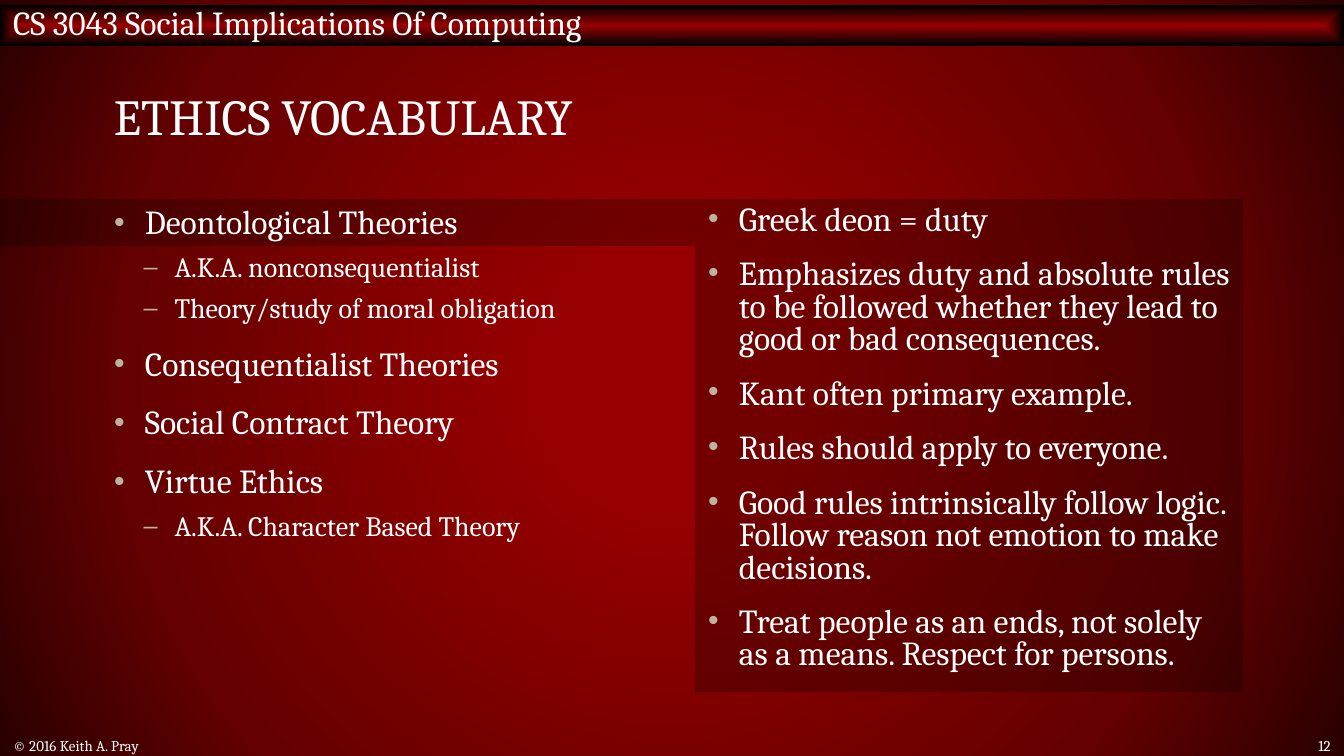
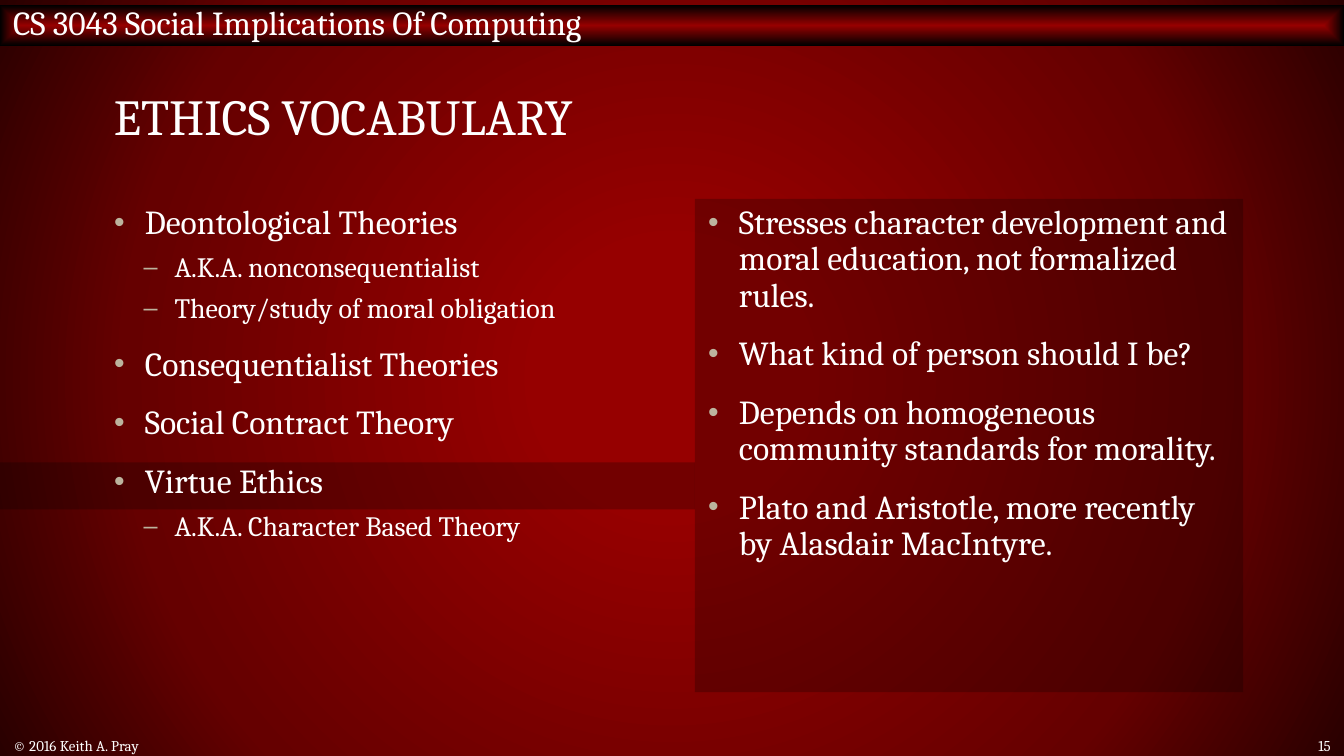
from lxml.etree import SubElement
from pptx import Presentation
from pptx.dml.color import RGBColor
from pptx.enum.shapes import MSO_SHAPE as Shape
from pptx.enum.text import MSO_ANCHOR as Anchor, PP_ALIGN as Align
from pptx.oxml.ns import qn
from pptx.util import Inches, Pt

# Content
COURSE = "CS 3043 Social Implications Of Computing"
TITLE = "ETHICS VOCABULARY"
COPYRIGHT = "© 2016 Keith A. Pray"
TOPICS = [  # (level, text)
    (0, "Deontological Theories"),
    (1, "A.K.A. nonconsequentialist"),
    (1, "Theory/study of moral obligation"),
    (0, "Consequentialist Theories"),
    (0, "Social Contract Theory"),
    (0, "Virtue Ethics"),
    (1, "A.K.A. Character Based Theory"),
]
PAGES = [
    {"number": "12", "band_top": 1.48, "spacing": 0.8, "details": [
        "Greek deon = duty",
        "Emphasizes duty and absolute rules to be followed whether they lead "
        "to good or bad consequences.",
        "Kant often primary example.",
        "Rules should apply to everyone.",
        "Good rules intrinsically follow logic. Follow reason not emotion to "
        "make decisions.",
        "Treat people as an ends, not solely as a means. Respect for persons.",
    ]},
    {"number": "15", "band_top": 3.44, "spacing": 0.9, "details": [
        "Stresses character development and moral education, not formalized rules.",
        "What kind of person should I be?",
        "Depends on homogeneous community standards for morality.",
        "Plato and Aristotle, more recently by Alasdair MacIntyre.",
    ]},
]

# Style
FONT = "Cambria"
WHITE = RGBColor(0xFF, 0xFF, 0xFF)
BLACK = RGBColor(0x00, 0x00, 0x00)
RED = RGBColor(0x96, 0x00, 0x00)
DEEP_RED = RGBColor(0x65, 0x00, 0x00)
DARK_RED = RGBColor(0x29, 0x00, 0x00)
BULLET = RGBColor(0xBC, 0xB4, 0x9E)
PAGE_STOPS = [(17, RED), (71, DEEP_RED), (100, DARK_RED)]
BAR_STOPS = [(0, RED), (100, BLACK)]
SHADE_OPACITY = 24
LEVELS = [  # size, space before, bullet, left indent
    (18, 12, "•", 0.23),
    (15, 6, "–", 0.45),
]
HANGING = 0.23

# Layout, on a 16:9 page
WIDTH = 10
HEIGHT = WIDTH * 9 / 16
MARGIN = 0.75
COLUMN_TOP, COLUMN_WIDTH, COLUMN_HEIGHT = 1.48, 4.08, 3.67
PANEL_LEFT = WIDTH - MARGIN - COLUMN_WIDTH
BAND_HEIGHT = 0.35
FOOTER_HEIGHT = 0.16
FOOTER_TOP = HEIGHT - FOOTER_HEIGHT
NUMBER_WIDTH = 0.68


def inches(*lengths):
    return [Inches(length) for length in lengths]


def set_gradient(fill, owner, stops, shading):
    """Fill from the centre outwards with (percent, colour) stops."""
    fill.gradient()
    gradient = owner.find(".//" + qn("a:gradFill"))
    gradient.clear()
    stop_list = SubElement(gradient, qn("a:gsLst"))
    for percent, color in stops:
        stop = SubElement(stop_list, qn("a:gs"), pos=str(percent * 1000))
        SubElement(stop, qn("a:srgbClr"), val=str(color))
    outline = SubElement(gradient, qn("a:path"), attrib={"path": shading})
    SubElement(outline, qn("a:fillToRect"),
               attrib={side: "50000" for side in "ltrb"})


def add_rectangle(page, place):
    box = page.shapes.add_shape(Shape.RECTANGLE, *inches(*place))
    box.shadow.inherit = False
    box.line.fill.background()
    return box


def add_shade(page, place):
    box = add_rectangle(page, place)
    box.fill.solid()
    box.fill.fore_color.rgb = BLACK
    color = box.element.spPr.find(".//" + qn("a:srgbClr"))
    SubElement(color, qn("a:alpha"), val=str(SHADE_OPACITY * 1000))


def write(para, text, size=18, align=Align.LEFT, spacing=None):
    para.alignment = align
    if spacing:
        para.line_spacing = spacing
    span = para.add_run()
    span.text = text
    span.font.name = FONT
    span.font.size = Pt(size)
    span.font.color.rgb = WHITE


def add_text(page, place, text, anchor=Anchor.MIDDLE, **style):
    box = page.shapes.add_textbox(*inches(*place))
    box.text_frame.word_wrap = True
    box.text_frame.vertical_anchor = anchor
    write(box.text_frame.paragraphs[0], text, **style)


def add_bullet(para, symbol, left):
    properties = para._p.get_or_add_pPr()
    properties.set("marL", str(Inches(left)))
    properties.set("indent", str(-Inches(HANGING)))
    tint = SubElement(properties, qn("a:buClr"))
    SubElement(tint, qn("a:srgbClr"), val=str(BULLET))
    SubElement(properties, qn("a:buSzPct"), val="90000")
    SubElement(properties, qn("a:buFont"), typeface="Arial")
    SubElement(properties, qn("a:buChar"), char=symbol)


def add_list(page, left, items, spacing=0.9):
    place = (left, COLUMN_TOP, COLUMN_WIDTH, COLUMN_HEIGHT)
    frame = page.shapes.add_textbox(*inches(*place)).text_frame
    frame.word_wrap = True
    for index, (level, text) in enumerate(items):
        para = frame.add_paragraph() if index else frame.paragraphs[0]
        size, before, symbol, indent = LEVELS[level]
        para.level = level
        add_bullet(para, symbol, indent)
        para.space_before = Pt(before if index else 0)
        write(para, text, size=size, spacing=spacing)


def add_course_bar(page):
    bar = add_rectangle(page, (0, 0.04, WIDTH, 0.3))
    set_gradient(bar.fill, bar.element.spPr, BAR_STOPS, "shape")
    frame = bar.text_frame
    frame.margin_top = 0
    frame.vertical_anchor = Anchor.MIDDLE
    write(frame.paragraphs[0], COURSE)


def add_page(deck, content):
    page = deck.slides.add_slide(deck.slide_layouts[6])
    set_gradient(page.background.fill, page.element, PAGE_STOPS, "circle")
    add_course_bar(page)
    # Band behind the current topic, joined to the detail panel
    add_shade(page, (0, content["band_top"], PANEL_LEFT, BAND_HEIGHT))
    add_shade(page, (PANEL_LEFT, COLUMN_TOP, COLUMN_WIDTH, COLUMN_HEIGHT))
    # Title and the two columns
    add_text(page, (MARGIN, 0.4, WIDTH - 2 * MARGIN, 1), TITLE,
             size=27, spacing=0.8)
    details = [(0, text) for text in content["details"]]
    add_list(page, PANEL_LEFT, details, content["spacing"])
    add_list(page, MARGIN, TOPICS)
    # Footer
    add_text(page, (0, FOOTER_TOP, 6.08, FOOTER_HEIGHT), COPYRIGHT, size=8)
    add_text(page, (WIDTH - NUMBER_WIDTH, FOOTER_TOP, NUMBER_WIDTH, FOOTER_HEIGHT),
             content["number"], size=8, align=Align.RIGHT)


def main():
    deck = Presentation()
    deck.slide_width, deck.slide_height = inches(WIDTH, HEIGHT)
    for content in PAGES:
        add_page(deck, content)
    deck.save("out.pptx")


if __name__ == "__main__":
    main()
